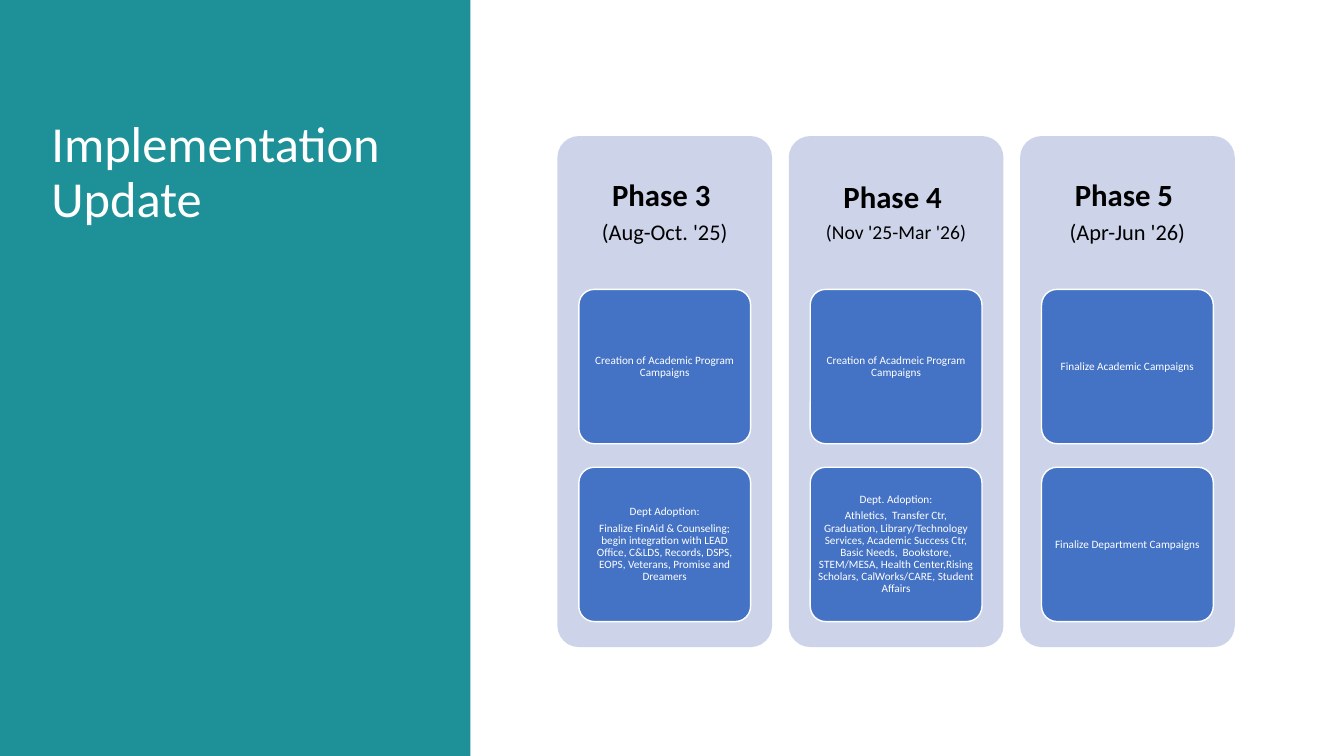
from pptx import Presentation
from pptx.dml.color import RGBColor
from pptx.enum.shapes import MSO_SHAPE
from pptx.enum.text import MSO_ANCHOR, PP_ALIGN
from pptx.util import Inches, Pt

COLORS = {"teal": "1E9097", "panel": "CDD4EA", "card": "4472C4",
          "white": "FFFFFF", "black": "000000"}
FONT = "Calibri"
SLIDE_WIDTH, SLIDE_HEIGHT = 13.333, 7.5
SIDEBAR_SHARE = 0.35
PHASES_BOX = (5.53, 1.35, 6.72, 5.07)
PANEL_WIDTH = 2.13

# Heading, dates, size of dates, space before dates, cards (each a list of paragraphs)
PHASES = [
    ("Phase 3 ", "(Aug-Oct. '25)", 16, 6, [
        ["Creation of Academic Program Campaigns"],
        ["Dept Adoption:",
         "Finalize FinAid & Counseling; begin integration with LEAD Office, C&LDS, "
         "Records, DSPS, EOPS, Veterans, Promise and Dreamers"]]),
    ("Phase 4 ", "(Nov '25-Mar '26)", 14, 5, [
        ["Creation of Acadmeic Program Campaigns"],
        ["Dept. Adoption:",
         "Athletics,  Transfer Ctr, Graduation, Library/Technology Services, "
         "Academic Success Ctr, Basic Needs,  Bookstore, STEM/MESA, "
         "Health Center,Rising Scholars, CalWorks/CARE, Student Affairs"]]),
    ("Phase 5 ", "(Apr-Jun '26)", 16, 6, [
        ["Finalize Academic Campaigns"],
        ["Finalize Department Campaigns"]]),
]


def color(name):
    return RGBColor.from_string(COLORS[name])


def add_block(page, kind, box, fill, line=None):
    """Add a filled, shadowless shape; box is left, top, width, height in inches."""
    block = page.shapes.add_shape(kind, *map(Inches, box))
    block.shadow.inherit = False
    block.fill.solid()
    block.fill.fore_color.rgb = color(fill)
    if line:
        block.line.color.rgb = color(line)
        block.line.width = Pt(1)
    else:
        block.line.fill.background()
    if kind == MSO_SHAPE.ROUNDED_RECTANGLE:
        block.adjustments[0] = 0.1
    return block


def prepare_frame(shape, inset):
    frame = shape.text_frame
    frame.word_wrap = True
    frame.vertical_anchor = MSO_ANCHOR.MIDDLE
    frame.margin_left = frame.margin_right = Inches(inset)
    frame.margin_top = frame.margin_bottom = Inches(inset)
    return frame


def format_paragraph(para, size, fill, align=PP_ALIGN.CENTER, bold=False, before=0):
    para.alignment = align
    para.line_spacing = 0.9
    para.space_before = Pt(before)
    para.font.name = FONT
    para.font.size = Pt(size)
    para.font.bold = bold
    para.font.color.rgb = color(fill)


def add_sidebar(page, box):
    left, top, width, height = box
    sidebar = add_block(page, MSO_SHAPE.RECTANGLE, box, "teal")
    title = page.shapes.title
    title.element.addprevious(sidebar.element)
    title.left, title.top = Inches(left + 0.46), Inches(top + 1)
    title.width, title.height = Inches(width * 0.75), Inches(1.45)
    frame = prepare_frame(title, 0.05)
    frame.text = "Implementation Update"
    format_paragraph(frame.paragraphs[0], 36, "white", PP_ALIGN.LEFT)


def add_card(page, box, lines):
    card = add_block(page, MSO_SHAPE.ROUNDED_RECTANGLE, box, "card", "white")
    frame = prepare_frame(card, 0.02)
    frame.text = "\n".join(lines)
    for index, para in enumerate(frame.paragraphs):
        format_paragraph(para, 8, "white", before=3 if index else 0)


def add_phase(page, box, phase):
    heading, dates, dates_size, dates_gap, cards = phase
    left, top, width, height = box
    add_block(page, MSO_SHAPE.ROUNDED_RECTANGLE, box, "panel")
    header_box = (left, top + 0.06 * height, width, 0.18 * height)
    header = page.shapes.add_textbox(*map(Inches, header_box))
    frame = prepare_frame(header, 0.09)
    frame.text = f"{heading}\n{dates}"
    format_paragraph(frame.paragraphs[0], 22, "black", bold=True)
    format_paragraph(frame.paragraphs[1], dates_size, "black", before=dates_gap)
    for row, lines in enumerate(cards):
        card_top = top + (0.3 + 0.348 * row) * height
        add_card(page, (left + 0.1 * width, card_top, 0.8 * width, 0.302 * height), lines)


def add_phases(page, box):
    left, top, width, height = box
    step = (width - PANEL_WIDTH) / (len(PHASES) - 1)
    for column, phase in enumerate(PHASES):
        add_phase(page, (left + column * step, top, PANEL_WIDTH, height), phase)


def main():
    deck = Presentation()
    deck.slide_width, deck.slide_height = Inches(SLIDE_WIDTH), Inches(SLIDE_HEIGHT)
    page = deck.slides.add_slide(deck.slide_layouts[5])
    add_sidebar(page, (0, 0, SIDEBAR_SHARE * SLIDE_WIDTH, SLIDE_HEIGHT))
    add_phases(page, PHASES_BOX)
    deck.save("out.pptx")


if __name__ == "__main__":
    main()
